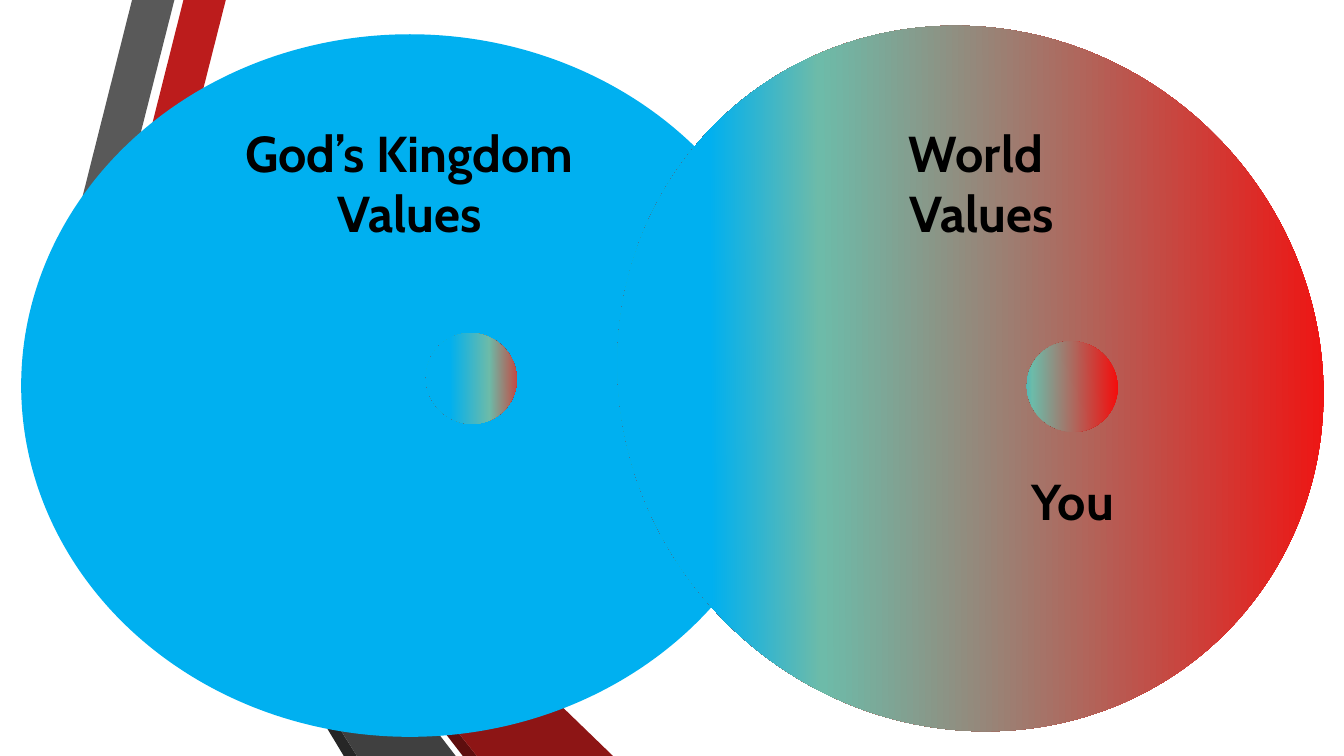
import copy
from dataclasses import dataclass

import pptx
import pptx.dml.color
import pptx.enum.shapes
import pptx.enum.text
import pptx.util

Inches = pptx.util.Inches

COLORS = {
    "background": "FFFFFF",
    "text": "000000",
    "red": "FF0000",
    "teal": "6DBBA9",
    "blue": "00B0F0",
    "ribbon_red": "BC1C1C",
    "ribbon_gray": "595959",
    "edge_gray": "262626",
    "edge_red": "5E0E0E",
    "fold_red": "8D1515",
    "fold_gray": "404040",
}
FONT = "Cabin"
TILT = 44.7
GRADIENT_ANGLE = 225
GRADIENT_COLORS = ("red", "teal", "blue")


@dataclass(frozen=True)
class Ribbon:
    color: str
    points: tuple[tuple[float, float], ...]


@dataclass(frozen=True)
class Circle:
    left: float
    top: float
    width: float
    height: float
    stops: tuple[float, ...] = ()


@dataclass(frozen=True)
class Label:
    text: str
    left: float
    top: float
    width: float
    height: float


RIBBONS = (
    Ribbon("ribbon_red", ((1.08, 2.94), (1.47, 3.04), (2.24, 0), (1.82, 0))),
    Ribbon("ribbon_gray", ((0.99, 2.92), (1.73, 0), (1.31, 0), (0.6, 2.82))),
    Ribbon("edge_gray", ((0.6, 2.82), (3.41, 7.5), (3.54, 7.5))),
    Ribbon("edge_red", ((4.73, 7.5), (1.08, 2.94), (4.59, 7.5))),
    Ribbon("fold_red", ((1.08, 2.94), (4.73, 7.5), (6.08, 7.5), (1.47, 3.04))),
    Ribbon("fold_gray", ((4.52, 7.5), (1.06, 3.01), (0.99, 2.92), (0.6, 2.82), (3.54, 7.5))),
)
CIRCLES = (
    Circle(0.21, 0.34, 7.71, 6.97),
    Circle(6.05, 0.33, 7.15, 6.85, (0.08, 0.65, 0.76)),
    Circle(10.18, 3.39, 0.91, 0.89, (0.09, 0.81, 1)),
    Circle(4.22, 3.31, 0.91, 0.89, (0, 0.36, 0.67)),
)
LABELS = (
    Label("God’s Kingdom Values", 2.18, 1.16, 3.76, 1.31),
    Label("World\v Values", 8.21, 1.16, 2.94, 1.31),
    Label("You", 9.17, 4.61, 2.94, 0.71),
)


def rgb(name: str) -> pptx.dml.color.RGBColor:
    return pptx.dml.color.RGBColor.from_string(COLORS[name])


def draw_ribbon(page: pptx.slide.Slide, ribbon: Ribbon) -> None:
    points = [(Inches(x), Inches(y)) for x, y in ribbon.points]
    builder = page.shapes.build_freeform(*points[0])
    builder.add_line_segments(points[1:], close=True)
    shape = builder.convert_to_shape()
    shape.shadow.inherit = False
    shape.fill.solid()
    shape.fill.fore_color.rgb = rgb(ribbon.color)
    shape.line.fill.background()


def draw_circle(page: pptx.slide.Slide, circle: Circle) -> None:
    shape = page.shapes.add_shape(
        pptx.enum.shapes.MSO_SHAPE.OVAL,
        Inches(circle.left),
        Inches(circle.top),
        Inches(circle.width),
        Inches(circle.height),
    )
    shape.shadow.inherit = False
    shape.line.fill.background()
    if not circle.stops:
        shape.fill.solid()
        shape.fill.fore_color.rgb = rgb("blue")
        return
    shape.rotation = TILT
    shape.fill.gradient()
    shape.fill.gradient_angle = GRADIENT_ANGLE
    stop_list = shape.element.xpath(".//a:gsLst")[0]
    stop_list.append(copy.deepcopy(stop_list[0]))
    for stop, position, color in zip(shape.fill.gradient_stops, circle.stops, GRADIENT_COLORS):
        stop.position = position
        stop.color.rgb = rgb(color)


def draw_label(page: pptx.slide.Slide, label: Label) -> None:
    box = page.shapes.add_textbox(
        Inches(label.left), Inches(label.top), Inches(label.width), Inches(label.height)
    )
    frame = box.text_frame
    frame.word_wrap = True
    frame.auto_size = pptx.enum.text.MSO_AUTO_SIZE.SHAPE_TO_FIT_TEXT
    para = frame.paragraphs[0]
    para.text = label.text
    para.alignment = pptx.enum.text.PP_ALIGN.CENTER
    for span in para.runs:
        span.font.name = FONT
        span.font.size = pptx.util.Pt(36)
        span.font.bold = True
        span.font.color.rgb = rgb("text")


def main() -> None:
    deck = pptx.Presentation()
    deck.slide_width = Inches(13.33)
    deck.slide_height = Inches(7.5)
    page = deck.slides.add_slide(deck.slide_layouts.get_by_name("Blank"))
    page.background.fill.solid()
    page.background.fill.fore_color.rgb = rgb("background")
    for ribbon in RIBBONS:
        draw_ribbon(page, ribbon)
    for circle in CIRCLES:
        draw_circle(page, circle)
    for label in LABELS:
        draw_label(page, label)
    deck.save("out.pptx")


if __name__ == "__main__":
    main()
